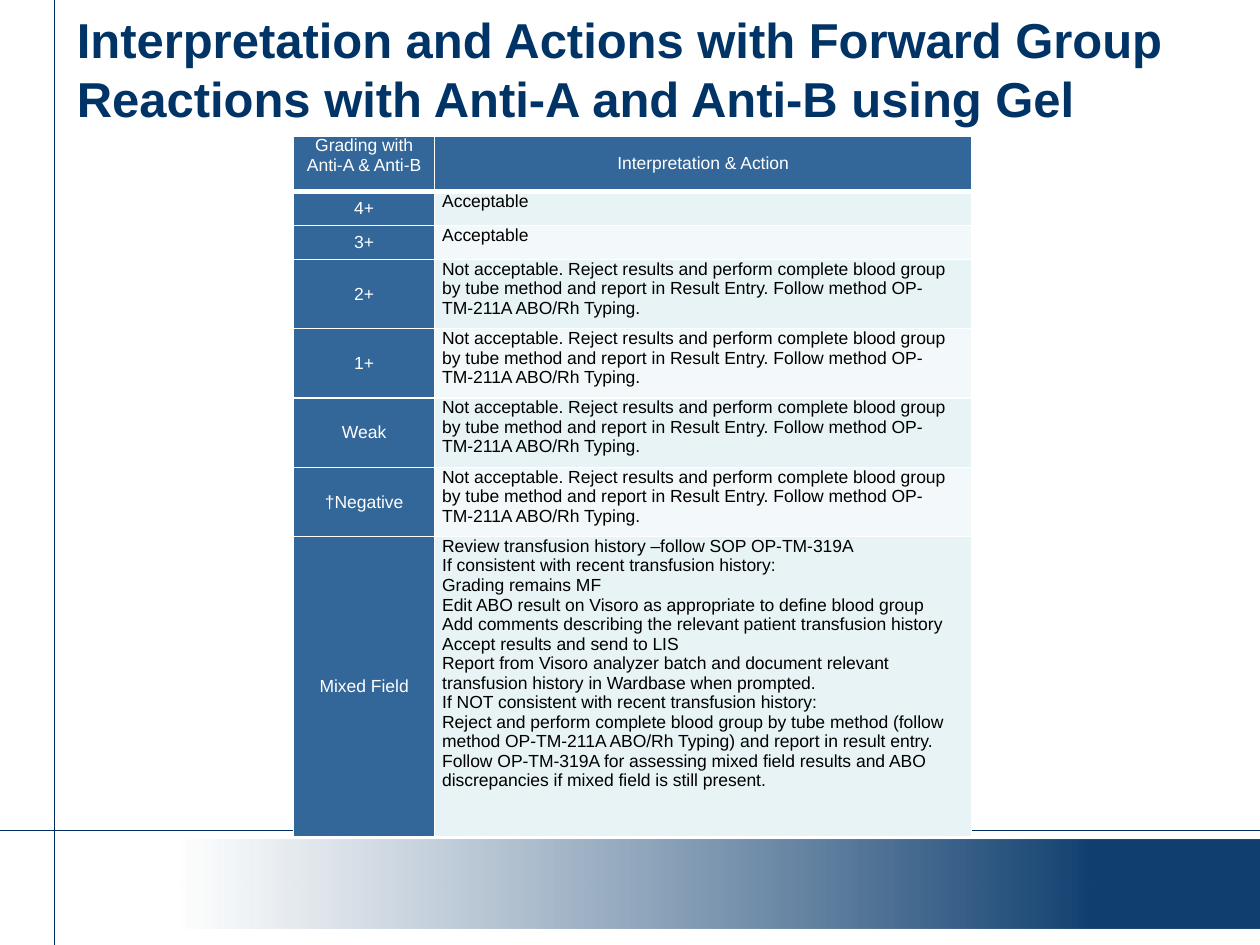
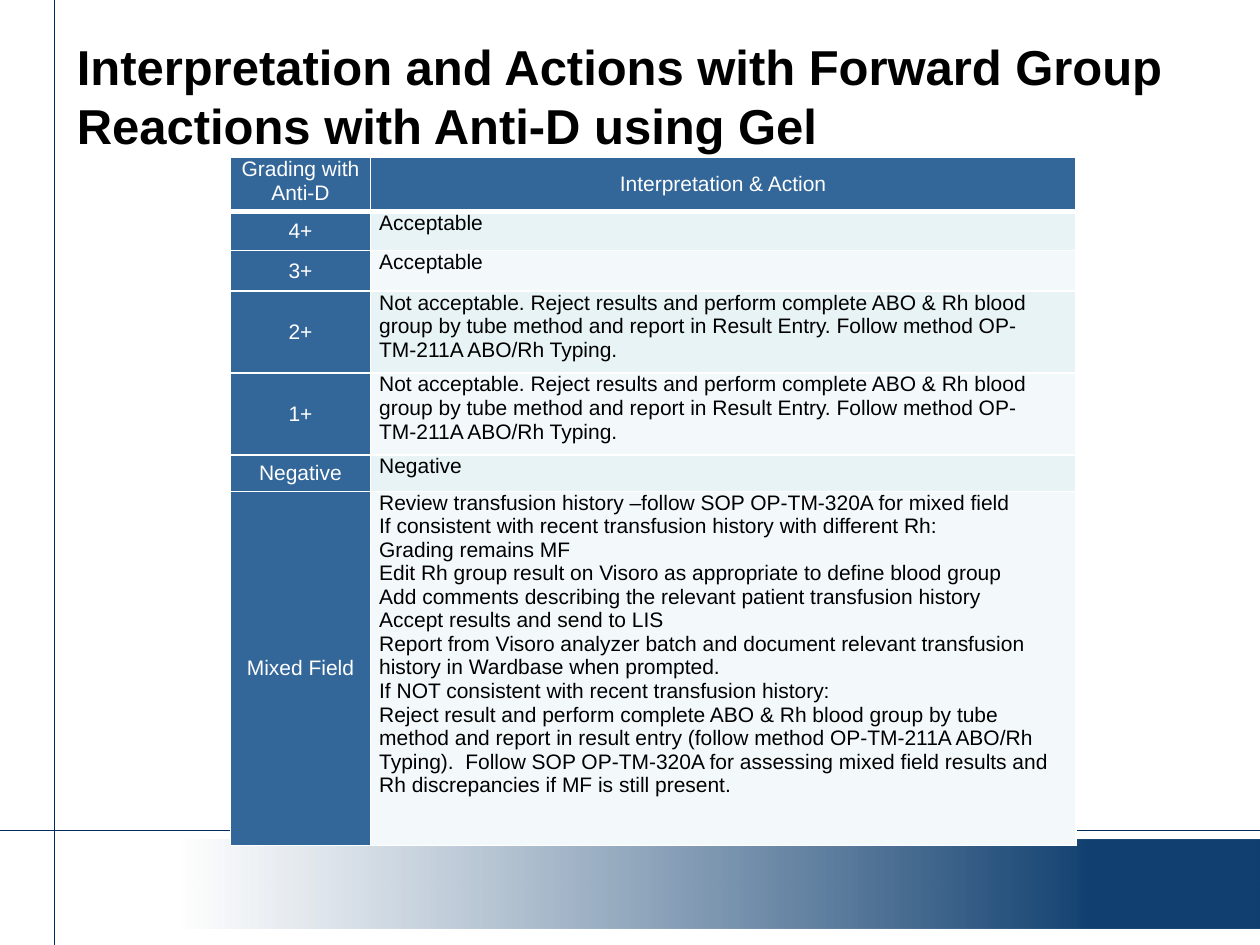
from dataclasses import dataclass
from lxml import etree
from pptx import Presentation
from pptx.dml.color import RGBColor
from pptx.enum.shapes import MSO_CONNECTOR, MSO_SHAPE
from pptx.enum.text import MSO_ANCHOR, MSO_AUTO_SIZE, PP_ALIGN
from pptx.oxml.ns import qn
from pptx.util import Inches, Pt

LEFT, CENTER = PP_ALIGN.LEFT, PP_ALIGN.CENTER
TOP, MIDDLE = MSO_ANCHOR.TOP, MSO_ANCHOR.MIDDLE
NO_FIT = MSO_AUTO_SIZE.NONE
RECT, STRAIGHT = MSO_SHAPE.RECTANGLE, MSO_CONNECTOR.STRAIGHT
TITLE_ONLY = 5

# The slide is a grid of 100 columns and 75 rows
COLS, ROWS = 100, 75
WIDE, HIGH = Inches(10), Inches(7.5)


@dataclass(frozen=True)
class Theme:
    font: str = "Arial"
    navy: str = "003366"
    rule: str = "002C5F"
    head: str = "336699"
    tints: tuple = ("E7F3F4", "F3F9FA")
    white: str = "FFFFFF"
    black: str = "000000"
    title: int = 28
    small: int = 10
    body: int = 12


THEME = Theme()

# Wording that both tables use
DEVICE, RECORD = "Visoro", "Wardbase"
METHOD = "OP-TM-211A ABO/Rh Typing"
HEADING = "Interpretation and Actions with Forward Group Reactions with "


def col(n):
    return round(WIDE * n / COLS)


def row(n):
    return round(HIGH * n / ROWS)


def place(box):
    left, top, width, height = box
    return col(left), row(top), col(width), row(height)


def reject(group):
    return [f"Not acceptable. Reject results and perform complete {group} by tube method "
            f"and report in Result Entry. Follow method {METHOD}."]


def review(source, match, group, ending):
    return [
        f"Review transfusion history –follow SOP {source}",
        f"If consistent with recent transfusion history{match}:",
        "Grading remains MF",
        f"Edit {group} result on {DEVICE} as appropriate to define blood group",
        "Add comments describing the relevant patient transfusion history",
        "Accept results and send to LIS",
        f"Report from {DEVICE} analyzer batch and document relevant "
        f"transfusion history in {RECORD} when prompted.",
        "If NOT consistent with recent transfusion history:",
        ending,
    ]


def write(frame, lines, size, color, align=LEFT, bold=False):
    frame.word_wrap = True
    for i, line in enumerate(lines):
        para = frame.paragraphs[0] if i == 0 else frame.add_paragraph()
        para.alignment = align
        run = para.add_run()
        run.text = line
        font = run.font
        font.name, font.size, font.bold = THEME.font, Pt(size), bold
        font.color.rgb = RGBColor.from_string(color)


def edge(cell, base):
    """Draw white borders on a cell; base is the weight of the bottom one."""
    props = cell._tc.get_or_add_tcPr()
    for side, weight in zip("LRTB", (1, 1, 1, base)):
        line = etree.SubElement(props, qn(f"a:ln{side}"), w=str(Pt(weight)))
        fill = etree.SubElement(line, qn("a:solidFill"))
        etree.SubElement(fill, qn("a:srgbClr"), val=THEME.white)


# Rules and the fading band at the foot
def add_frame(slide):
    for ends in ((0, 65.9, COLS, 65.9), (4.3, 0, 4.3, ROWS)):
        line = slide.shapes.add_connector(STRAIGHT, *place(ends))
        line.line.color.rgb = RGBColor.from_string(THEME.rule)
        line.line.width = Pt(0.75)
        etree.SubElement(line._element.spPr, qn("a:effectLst"))

    band = slide.shapes.add_shape(RECT, *place((4.7, 66.6, 95.3, 7.1)))
    band.shadow.inherit = False
    band.line.fill.background()
    band.fill.gradient()
    band.fill.gradient_angle = 0
    looks = ((0.10, THEME.white, 77), (0.86, THEME.navy, 93))
    for stop, (spot, color, _) in zip(band.fill.gradient_stops, looks):
        stop.position = spot
        stop.color.rgb = RGBColor.from_string(color)
    tones = band._element.spPr.iter(qn("a:srgbClr"))
    for tone, (_, _, alpha) in zip(list(tones), looks):
        etree.SubElement(tone, qn("a:alpha"), val=str(alpha * 1000))


# Heading, with an optional lift given in grid rows
def add_title(slide, text, color, box=(5.1, 1.3, 92.9, 12.6), lift=0):
    title = slide.shapes.title
    title.left, title.top, title.width, title.height = place(box)
    frame = title.text_frame
    frame.auto_size = NO_FIT
    frame.vertical_anchor = MIDDLE
    frame.margin_top, frame.margin_bottom = 0, row(2 * lift)
    write(frame, [text], THEME.title, color, bold=True)


# Grading table: labels at the left, actions at the right
def add_grades(slide, box, split, heights, data, size, inset):
    width = box[2]
    table = slide.shapes.add_table(len(data), 2, *place(box)).table
    for column, share in zip(table.columns, (split, width - split)):
        column.width = col(share)
    for i, (height, (label, action)) in enumerate(zip(heights, data)):
        table.rows[i].height = row(height)
        for j, lines in enumerate(([label], action)):
            dark = i == 0 or j == 0
            cell = table.cell(i, j)
            cell.margin_left = cell.margin_right = col(inset)
            cell.margin_top = cell.margin_bottom = 0
            cell.vertical_anchor = MIDDLE if dark and i + j > 0 else TOP
            edge(cell, 3 if i == 0 else 1)
            cell.fill.solid()
            fill = THEME.head if dark else THEME.tints[(i - 1) % 2]
            cell.fill.fore_color.rgb = RGBColor.from_string(fill)
            write(cell.text_frame, lines, size,
                  THEME.white if dark else THEME.black,
                  align=CENTER if dark else LEFT)


def add_page(deck, title, grades):
    slide = deck.slides.add_slide(deck.slide_layouts[TITLE_ONLY])
    add_frame(slide)
    add_title(slide, **title)
    add_grades(slide, **grades)


def start(test):
    """Rows that open each table."""
    return [(f"Grading with {test}", ["Interpretation & Action"]),
            ("4+", ["Acceptable"]), ("3+", ["Acceptable"])]


def main():
    deck = Presentation()
    deck.slide_width, deck.slide_height = WIDE, HIGH

    # Anti-A and Anti-B
    ending = (f"Reject and perform complete blood group by tube method (follow method {METHOD}) "
              "and report in result entry. Follow OP-TM-319A for assessing mixed field results "
              "and ABO discrepancies if mixed field is still present.")
    data = start("Anti-A & Anti-B")
    data += [(grade, reject("blood group")) for grade in ("2+", "1+", "Weak", "†Negative")]
    data.append(("Mixed Field", review("OP-TM-319A", "", "ABO", ending)))
    add_page(
        deck,
        dict(text=HEADING + "Anti-A and Anti-B using Gel", color=THEME.navy, lift=2.2),
        dict(box=(23.3, 10.8, 53.8, 55.6), split=11.2, data=data, size=THEME.small, inset=0.6,
             heights=[4.4, 2.7, 2.7] + [5.5] * 4 + [23.8]))

    # Anti-D
    group = "ABO & Rh blood group"
    ending = (f"Reject result and perform complete {group} by tube method and report in result "
              f"entry (follow method {METHOD}).  Follow SOP OP-TM-320A for assessing mixed "
              "field results and Rh discrepancies if MF is still present.")
    data = start("Anti-D")
    data += [(grade, reject(group)) for grade in ("2+", "1+")]
    data += [("Negative", ["Negative"]),
             ("Mixed Field", review("OP-TM-320A for mixed field", " with different Rh",
                                    "Rh group", ending))]
    add_page(
        deck,
        dict(text=HEADING + "Anti-D using Gel", color=THEME.black),
        dict(box=(18.3, 12.5, 67.1, 54.6), split=11.1, data=data, size=THEME.body, inset=0.7,
             heights=[4.3, 3.1, 3.2, 6.5, 6.5, 2.9, 28.1]))

    deck.save("out.pptx")


if __name__ == "__main__":
    main()
